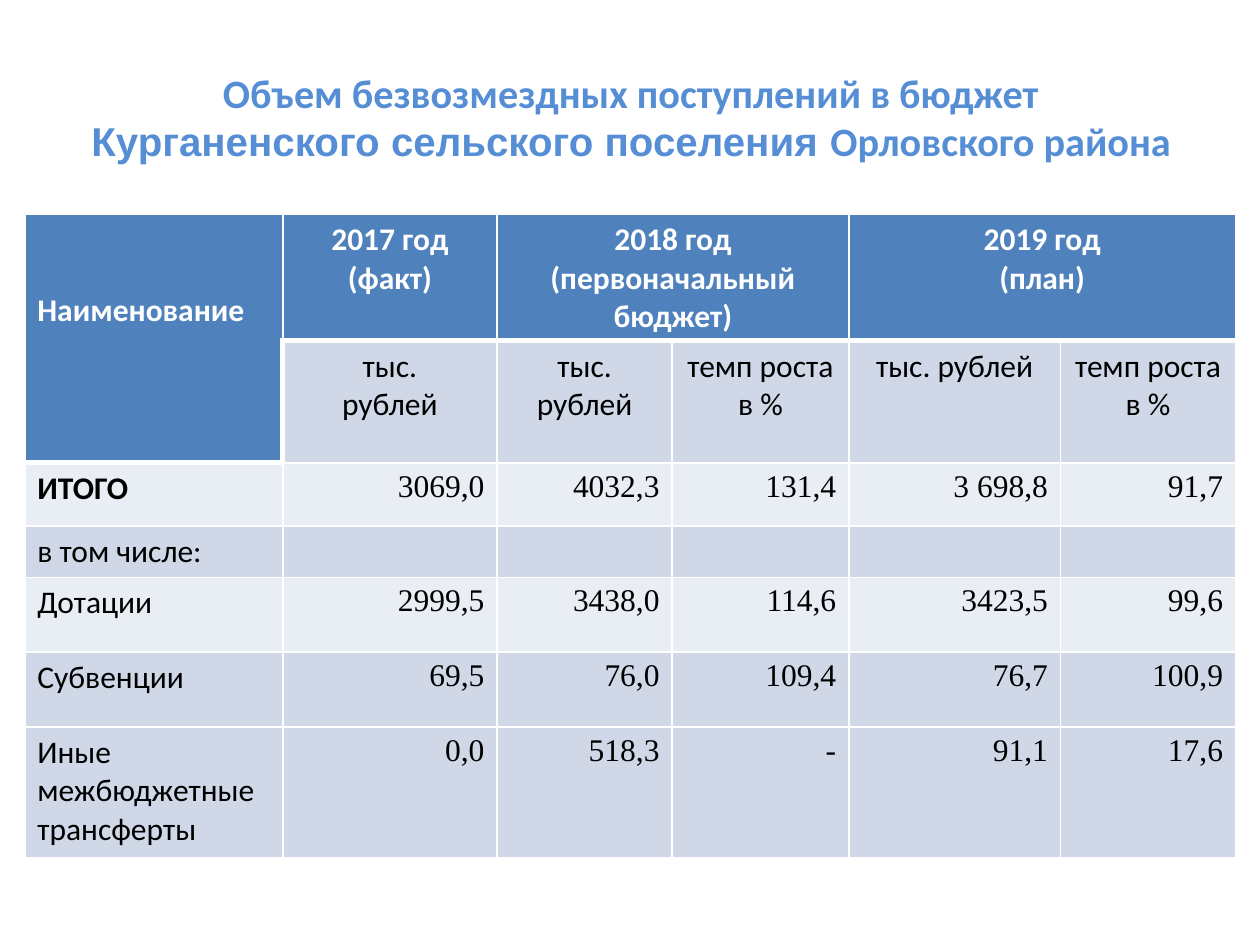
from lxml import etree
from pptx import Presentation
from pptx import util as u
from pptx.dml.color import RGBColor
from pptx.enum import text
from pptx.oxml import ns

COLORS = {
    "title": "558ED5", "header": "4F81BD", "band": "D0D8E8",
    "light": "E9EDF4", "white": "FFFFFF", "black": "000000",
}
LEFT, CENTER, RIGHT = text.PP_ALIGN.LEFT, text.PP_ALIGN.CENTER, text.PP_ALIGN.RIGHT

COLUMN_WIDTHS = [5.2, 4.32, 3.53, 3.56, 4.27, 3.53]
ROW_HEIGHTS = [2.55, 2.46, 1.27, 1.04, 1.5, 1.52, 2.64]
BUDGET_YEARS = {
    1: "2017 год\n(факт)",
    2: "2018 год (первоначальный бюджет)",
    4: "2019 год\n(план)",
}
UNITS = ["тыс.\nрублей", "тыс. рублей", "темп роста в %", "тыс. рублей", "темп роста в %"]
RECEIPTS = [
    ("light", "ИТОГО", ["3069,0", "4032,3", "131,4", "3 698,8", "91,7"]),
    ("band", "в том числе:", [""] * 5),
    ("light", "Дотации", ["2999,5", "3438,0", "114,6", "3423,5", "99,6"]),
    ("band", "Субвенции", ["69,5", "76,0", "109,4", "76,7", "100,9"]),
    ("band", "Иные межбюджетные трансферты", ["0,0", "518,3", "-", "91,1", "17,6"]),
]


class BudgetSlide:
    label_font, number_font = "Calibri", "Times New Roman"
    title_size, table_size = u.Pt(23), u.Pt(18)

    def __init__(self, presentation):
        self.slide = presentation.slides.add_slide(presentation.slide_layouts[6])

    def style(self, font, name, size, color, bold=False):
        font.name, font.size, font.bold = name, size, bold
        font.color.rgb = RGBColor.from_string(COLORS[color])

    def title(self, parts, left, top, width, height):
        """Write one centred paragraph from (wording, font name) parts."""
        box = self.slide.shapes.add_textbox(u.Cm(left), u.Cm(top), u.Cm(width), u.Cm(height))
        frame = box.text_frame
        frame.word_wrap = True
        frame.vertical_anchor = text.MSO_ANCHOR.MIDDLE
        heading = frame.paragraphs[0]
        heading.alignment = CENTER
        self.style(heading.font, self.label_font, self.title_size, "title", True)
        for wording, font_name in parts:
            run = heading.add_run()
            run.text = wording
            self.style(run.font, font_name, self.title_size, "title", True)

    def table(self, left, top, widths, heights):
        frame = self.slide.shapes.add_table(
            len(heights), len(widths), u.Cm(left), u.Cm(top),
            u.Cm(sum(widths)), u.Cm(sum(heights)))
        for column, width in zip(frame.table.columns, widths):
            column.width = u.Cm(width)
        for row, height in zip(frame.table.rows, heights):
            row.height = u.Cm(height)
        return frame.table

    def borders(self, cell, thick=""):
        """Draw white cell edges; the sides named in thick (L, R, T, B) get 3 pt."""
        properties = cell._tc.get_or_add_tcPr()
        for side in "LRTB":
            width = u.Pt(3 if side in thick else 1)
            line = etree.SubElement(properties, ns.qn(f"a:ln{side}"), w=str(width))
            fill = etree.SubElement(line, ns.qn("a:solidFill"))
            etree.SubElement(fill, ns.qn("a:srgbClr"), val=COLORS["white"])

    def cell(self, cell, wording, fill, align=LEFT, font=label_font,
             color="black", bold=False, thick=""):
        self.borders(cell, thick)
        cell.fill.solid()
        cell.fill.fore_color.rgb = RGBColor.from_string(COLORS[fill])
        cell.text_frame.text = wording
        for paragraph in cell.text_frame.paragraphs:
            paragraph.alignment = align
            self.style(paragraph.font, font, self.table_size, color, bold)


def fill_header(page, table):
    table.cell(0, 0).merge(table.cell(1, 0))
    for first in (2, 4):
        table.cell(0, first).merge(table.cell(0, first + 1))
    header = {"fill": "header", "color": "white", "bold": True, "thick": "B"}
    page.cell(table.cell(0, 0), "Наименование", **header)
    table.cell(0, 0).margin_top = u.Cm(1.55)
    page.cell(table.cell(1, 0), "", **{**header, "thick": "RB"})
    for column in range(1, len(COLUMN_WIDTHS)):
        page.cell(table.cell(0, column), BUDGET_YEARS.get(column, ""), align=CENTER, **header)
    for column, unit in enumerate(UNITS, 1):
        page.cell(table.cell(1, column), unit, "band", CENTER,
                  thick="LT" if column == 1 else "T")


def fill_receipts(page, table):
    for row, (fill, name, amounts) in enumerate(RECEIPTS, 2):
        is_total = row == 2
        page.cell(table.cell(row, 0), name, fill, bold=is_total, thick="T" if is_total else "")
        for column, amount in enumerate(amounts, 1):
            page.cell(table.cell(row, column), amount, fill, RIGHT, page.number_font)


def main():
    presentation = Presentation()
    presentation.slide_width, presentation.slide_height = u.Cm(25.4), u.Cm(19.05)
    page = BudgetSlide(presentation)
    page.title([
        ("Объем безвозмездных поступлений в бюджет ", "Calibri"),
        ("Курганенского сельского поселения ", "Arial"),
        ("Орловского района", "Calibri"),
    ], 1.3, 0.95, 22.86, 2.8)
    receipts = page.table(0.5, 4.32, COLUMN_WIDTHS, ROW_HEIGHTS)
    fill_header(page, receipts)
    fill_receipts(page, receipts)
    presentation.save("out.pptx")


if __name__ == "__main__":
    main()
